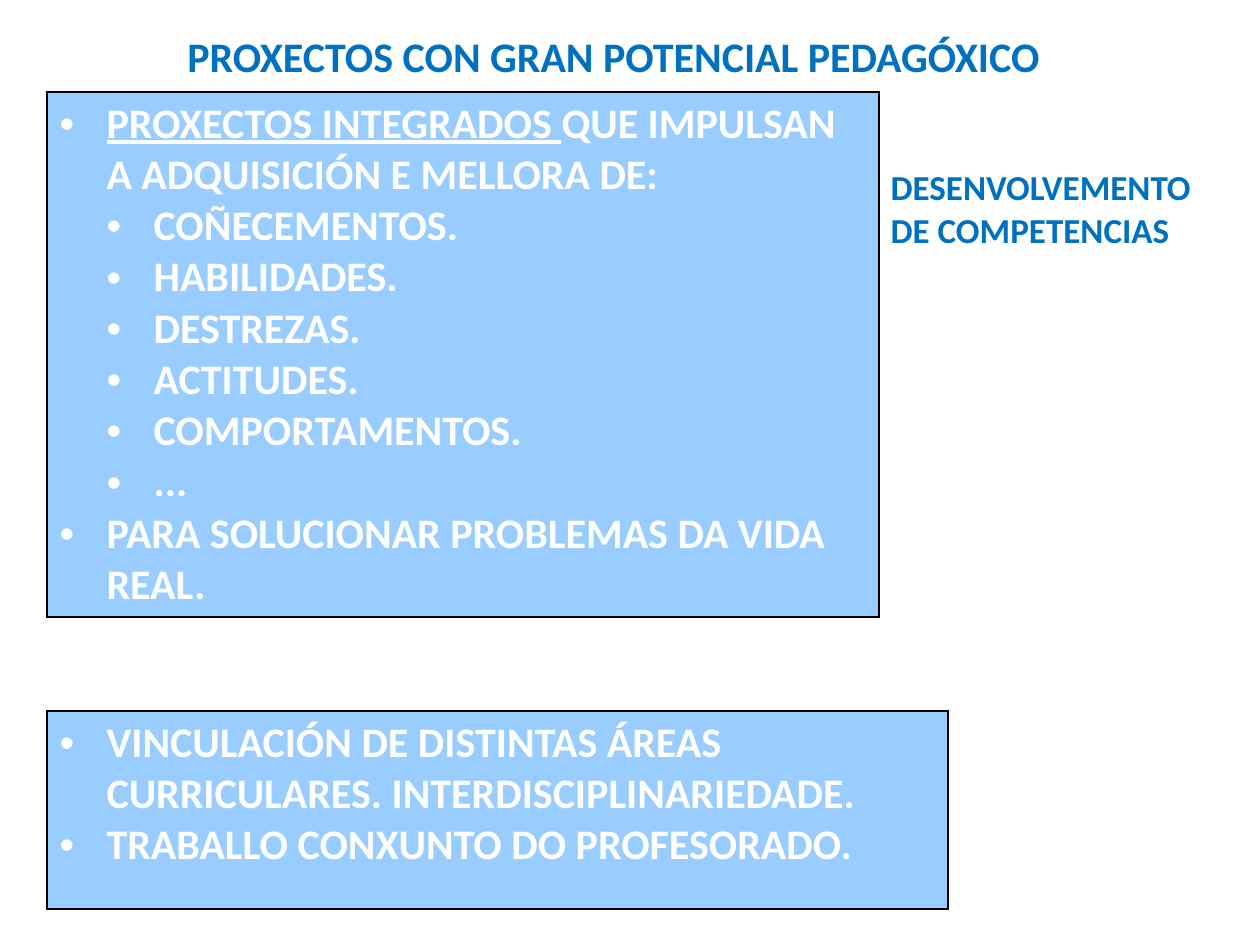
import pptx
import pptx.dml.color
import pptx.enum.text
import pptx.oxml
import pptx.oxml.ns
import pptx.util

PX = 914400 // 126
INDENT = 47
BLUE = "0070C0"
SKY = "99CCFF"
WHITE = "FFFFFF"
BLACK = "000000"
NS = pptx.oxml.ns.nsdecls("a")

GOALS = ["COÑECEMENTOS.", "HABILIDADES.", "DESTREZAS.", "ACTITUDES.",
         "COMPORTAMENTOS.", "..."]
PROJECTS = [
    (0, [("PROXECTOS INTEGRADOS ", True),
         ("QUE IMPULSAN A ADQUISICIÓN E MELLORA DE:", False)]),
    *[(1, [(goal, False)]) for goal in GOALS],
    (0, [("PARA SOLUCIONAR PROBLEMAS DA VIDA REAL.", False)]),
]
TEAMWORK = [
    (0, [("VINCULACIÓN DE DISTINTAS ÁREAS CURRICULARES. INTERDISCIPLINARIEDADE.", False)]),
    (0, [("TRABALLO CONXUNTO DO PROFESORADO.", False)]),
]


def color(value):
    return pptx.dml.color.RGBColor.from_string(value)


def scale(box):
    return [pptx.util.Emu(length * PX) for length in box]


def add_span(para, text, size, ink, underline=False):
    span = para.add_run()
    span.text = text
    span.font.name = "Calibri"
    span.font.size = pptx.util.Pt(size)
    span.font.bold = True
    span.font.color.rgb = color(ink)
    if underline:
        span.font.underline = True


def add_bullet(para, level):
    para.level = level
    properties = para._p.get_or_add_pPr()
    properties.set("marL", str((level + 1) * INDENT * PX))
    properties.set("indent", str(-INDENT * PX))
    properties.append(pptx.oxml.parse_xml(f'<a:buFont {NS} typeface="Arial"/>'))
    properties.append(pptx.oxml.parse_xml(f'<a:buChar {NS} char="•"/>'))


def set_borders(cell, ink):
    paint = f'<a:solidFill><a:srgbClr val="{ink}"/></a:solidFill>' if ink else "<a:noFill/>"
    properties = cell._tc.get_or_add_tcPr()
    for side in ("lnL", "lnR", "lnT", "lnB"):
        properties.append(pptx.oxml.parse_xml(
            f'<a:{side} {NS} w="{pptx.util.Pt(1)}">{paint}</a:{side}>'))


def add_cell(page, box, border=None, fill=None):
    table = page.shapes.add_table(1, 1, *scale(box)).table
    table.first_row = False
    table.horz_banding = False
    cell = table.cell(0, 0)
    set_borders(cell, border)
    if fill:
        cell.fill.solid()
        cell.fill.fore_color.rgb = color(fill)
    else:
        cell.fill.background()
    return cell


def add_panel(page, box, items):
    frame = add_cell(page, box, BLACK, SKY).text_frame
    for index, (level, spans) in enumerate(items):
        para = frame.add_paragraph() if index else frame.paragraphs[0]
        add_bullet(para, level)
        for text, underline in spans:
            add_span(para, text, 24, WHITE, underline)


def add_heading(page, box, text, size, alignment=None):
    para = add_cell(page, box).text_frame.paragraphs[0]
    para.alignment = alignment
    add_span(para, text, size, BLUE)


def main():
    deck = pptx.Presentation()
    deck.slide_width, deck.slide_height = scale((1260, 945))
    page = deck.slides.add_slide(deck.slide_layouts[6])
    add_panel(page, (47, 92, 832, 480), PROJECTS)
    add_heading(page, (57, 26, 1113, 69), "PROXECTOS CON GRAN POTENCIAL PEDAGÓXICO",
                24, pptx.enum.text.PP_ALIGN.CENTER)
    add_panel(page, (47, 711, 901, 198), TEAMWORK)
    add_heading(page, (878, 161, 357, 213), "DESENVOLVEMENTO DE COMPETENCIAS", 20)
    deck.save("out.pptx")


if __name__ == "__main__":
    main()
